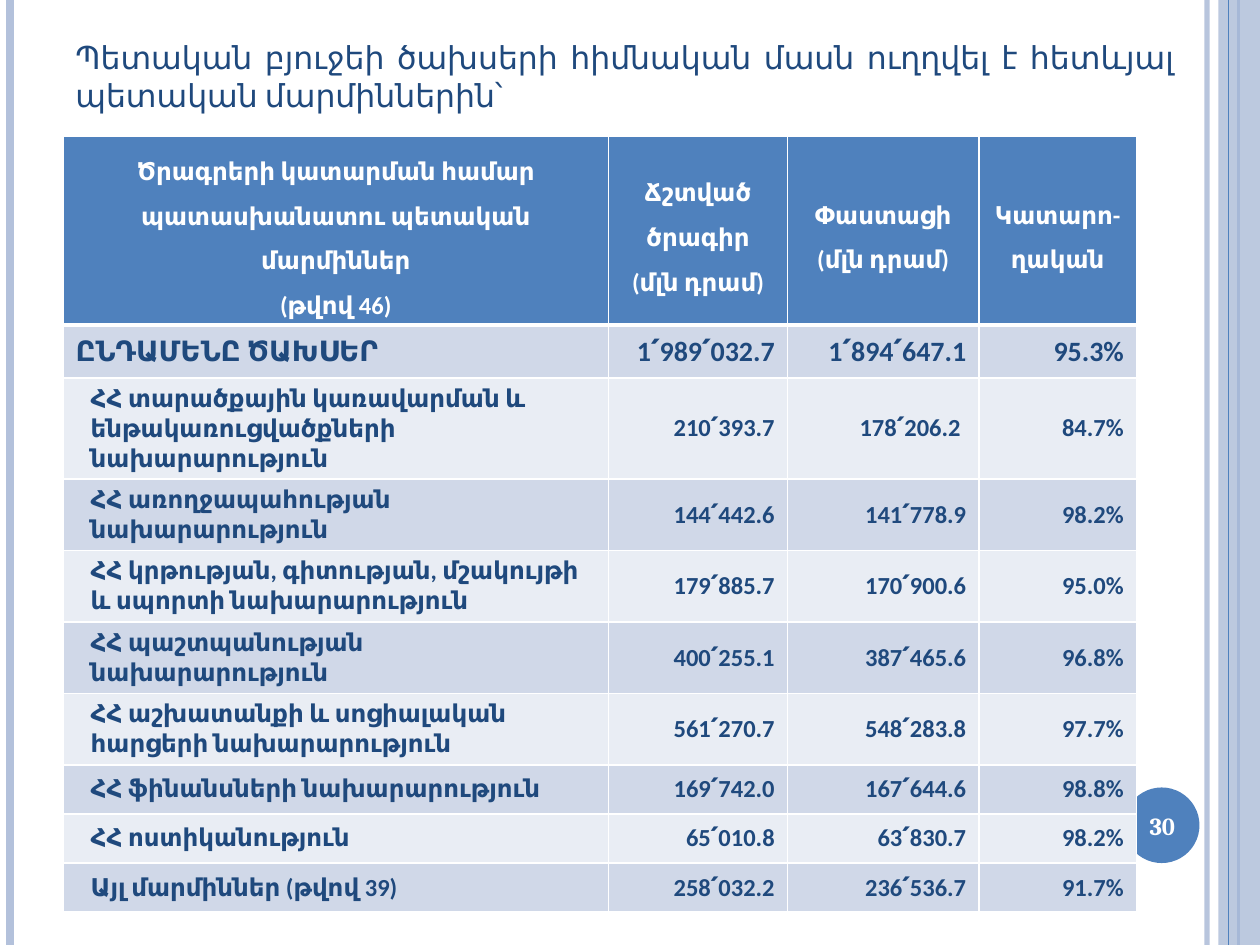
from lxml.etree import SubElement
from pptx import Presentation
from pptx.dml.color import RGBColor
from pptx.enum.shapes import MSO_CONNECTOR, MSO_SHAPE
from pptx.enum.text import MSO_ANCHOR, PP_ALIGN
from pptx.oxml.ns import qn
from pptx.util import Inches, Pt

BLUE = RGBColor(0x4F, 0x81, 0xBD)
PALE_BLUE = RGBColor(0xB3, 0xC1, 0xDB)
NAVY = RGBColor(0x1F, 0x49, 0x7D)
WHITE = RGBColor(0xFF, 0xFF, 0xFF)
BAND_DARK = RGBColor(0xD0, 0xD8, 0xE8)
BAND_LIGHT = RGBColor(0xE9, 0xED, 0xF4)

HEADER = [
    ["Ծրագրերի կատարման համար պատասխանատու պետական մարմիններ", "(թվով 46)"],
    ["Ճշտված ծրագիր", "(մլն դրամ)"],
    ["Փաստացի", "(մլն դրամ)"],
    ["Կատարո-ղական"],
]
SPENDING = [
    ("ԸՆԴԱՄԵՆԸ ԾԱԽՍԵՐ", "1՛989՛032.7", "1՛894՛647.1", "95.3%"),
    ("ՀՀ տարածքային կառավարման և ենթակառուցվածքների նախարարություն",
     "210՛393.7", "178՛206.2 ", "84.7%"),
    ("ՀՀ առողջապահության նախարարություն", "144՛442.6", "141՛778.9", "98.2%"),
    ("ՀՀ կրթության, գիտության, մշակույթի և սպորտի նախարարություն",
     "179՛885.7", "170՛900.6", "95.0%"),
    ("ՀՀ պաշտպանության նախարարություն", "400՛255.1", "387՛465.6", "96.8%"),
    ("ՀՀ աշխատանքի և սոցիալական հարցերի նախարարություն",
     "561՛270.7", "548՛283.8", "97.7%"),
    ("ՀՀ ֆինանսների նախարարություն", "169՛742.0", "167՛644.6", "98.8%"),
    ("ՀՀ ոստիկանություն", "65՛010.8", "63՛830.7", "98.2%"),
    ("Այլ մարմիններ (թվով 39)", "258՛032.2", "236՛536.7", "91.7%"),
]
COLUMN_WIDTHS = [4.33, 1.42, 1.52, 1.25]
ROW_HEIGHTS = [1.17, 0.42, 0.44, 0.4] + [0.39] * 6


def style(para, size, color, bold=True, name="Calibri"):
    for span in para.runs:
        span.font.name = name
        span.font.size = Pt(size)
        span.font.bold = bold
        span.font.color.rgb = color


def set_opacity(shape, percent):
    for color in shape._element.spPr.iter(qn("a:srgbClr")):
        SubElement(color, qn("a:alpha")).set("val", str(percent * 1000))


deck = Presentation()
deck.slide_width, deck.slide_height = Inches(10), Inches(7.5)
page = deck.slides.add_slide(deck.slide_layouts[6])

# Vertical stripes along both edges, with the side panel among them
for x, color, weight in [(9.58, PALE_BLUE, 3), (0.08, PALE_BLUE, 4.5),
                         (9.83, BLUE, 1.5), (9.75, BLUE, 0.75)]:
    if x == 9.75:
        panel = page.shapes.add_shape(MSO_SHAPE.RECTANGLE, Inches(9.67), 0,
                                      Inches(0.33), deck.slide_height)
        panel.shadow.inherit = False
        panel.fill.solid()
        panel.fill.fore_color.rgb = PALE_BLUE
        panel.line.fill.background()
        set_opacity(panel, 87)
    stripe = page.shapes.add_connector(MSO_CONNECTOR.STRAIGHT, Inches(x), 0,
                                       Inches(x), deck.slide_height)
    stripe.line.color.rgb = color
    stripe.line.width = Pt(weight)
    SubElement(stripe._element.spPr, qn("a:effectLst"))
    if x == 9.58:
        set_opacity(stripe, 93)

# Page number disc
disc = page.shapes.add_shape(MSO_SHAPE.OVAL, Inches(8.92), Inches(6.25),
                             Inches(0.6), Inches(0.6))
disc.shadow.inherit = False
disc.fill.solid()
disc.fill.fore_color.rgb = BLUE
disc.line.fill.background()

# Title and page number
for place, text, align, anchor, look in [
    ((0.5, 0.25, 8.92, 0.75),
     "Պետական բյուջեի ծախսերի հիմնական մասն ուղղվել է հետևյալ պետական մարմիններին՝",
     PP_ALIGN.JUSTIFY, MSO_ANCHOR.TOP, (18, NAVY, False)),
    ((8.89, 6.27, 0.67, 0.57), "30",
     PP_ALIGN.CENTER, MSO_ANCHOR.MIDDLE, (14, WHITE, True, "Cambria")),
]:
    box = page.shapes.add_textbox(*[Inches(length) for length in place])
    frame = box.text_frame
    frame.word_wrap = True
    frame.vertical_anchor = anchor
    frame.text = text
    frame.paragraphs[0].alignment = align
    style(frame.paragraphs[0], *look)

# Spending table
table = page.shapes.add_table(
    len(ROW_HEIGHTS), len(COLUMN_WIDTHS), Inches(0.5), Inches(1.08),
    Inches(sum(COLUMN_WIDTHS)), Inches(sum(ROW_HEIGHTS))).table
for column, width in zip(table.columns, COLUMN_WIDTHS):
    column.width = Inches(width)
for row, height in zip(table.rows, ROW_HEIGHTS):
    row.height = Inches(height)

for r, entries in enumerate([HEADER] + SPENDING):
    for c, entry in enumerate(entries):
        cell = table.cell(r, c)
        cell.vertical_anchor = MSO_ANCHOR.MIDDLE

        # White borders, thicker under the header
        for side in ("L", "R", "T", "B"):
            thick = (r, side) in [(0, "B"), (1, "T")]
            border = SubElement(cell._tc.get_or_add_tcPr(), qn(f"a:ln{side}"))
            border.set("w", str(Pt(3 if thick else 1)))
            paint = SubElement(border, qn("a:solidFill"))
            SubElement(paint, qn("a:srgbClr")).set("val", str(WHITE))

        cell.fill.solid()
        if r == 0:
            cell.fill.fore_color.rgb = BLUE
            cell.text_frame.text = "\n".join(entry)
            if c > 0:
                cell.margin_left = cell.margin_right = Inches(0.07)
                cell.margin_top = cell.margin_bottom = 0
        else:
            cell.fill.fore_color.rgb = BAND_DARK if r % 2 else BAND_LIGHT
            cell.text_frame.text = entry

        for para in cell.text_frame.paragraphs:
            if r == 0:
                para.alignment = PP_ALIGN.CENTER
                para.line_spacing = 1.5
                style(para, 14, WHITE)
            else:
                para.alignment = PP_ALIGN.RIGHT if c else PP_ALIGN.LEFT
                if c == 0 and r > 1:
                    para._p.get_or_add_pPr().set("marL", str(Inches(0.12)))
                style(para, 16 if r == 1 else 14, NAVY)

deck.save("out.pptx")
